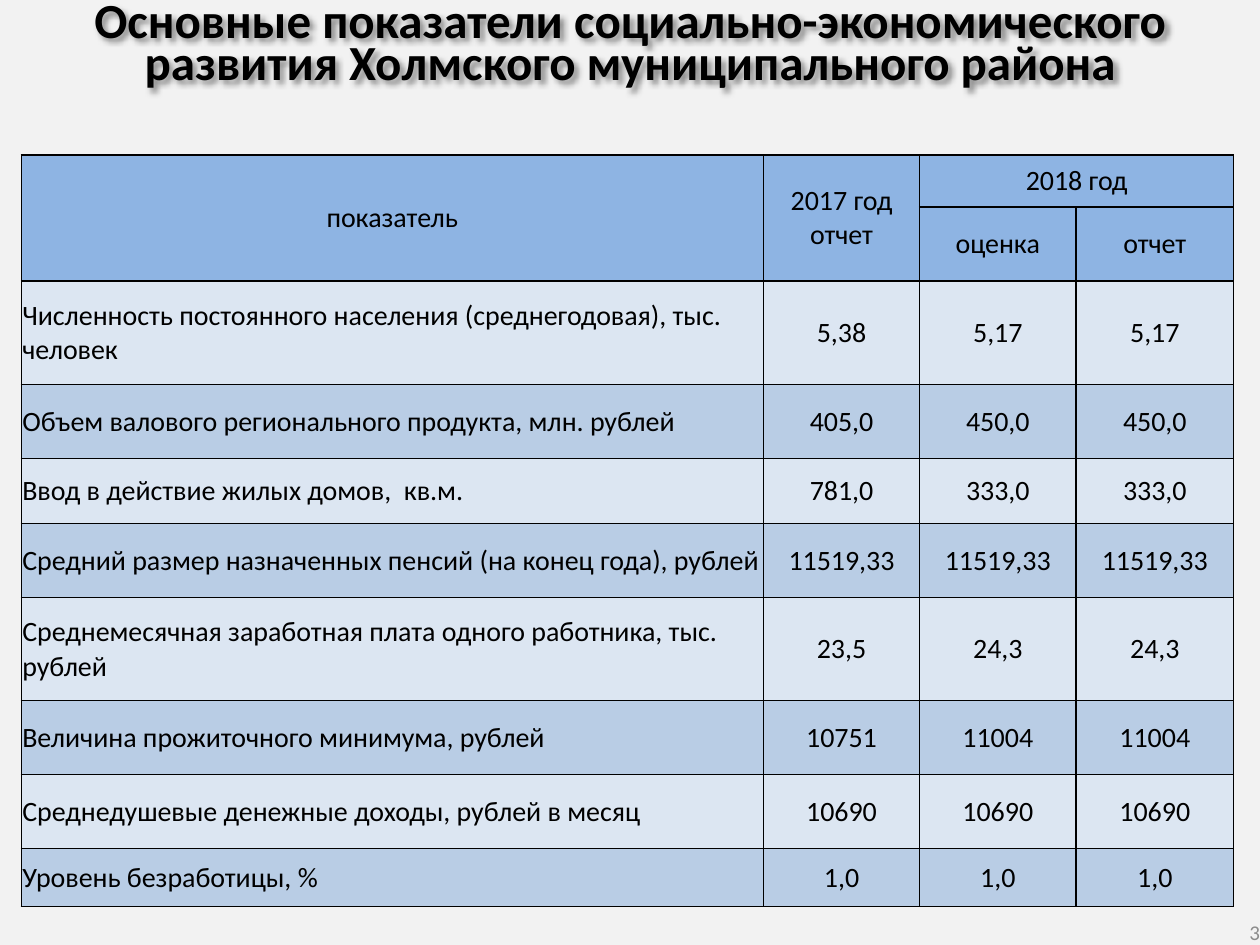
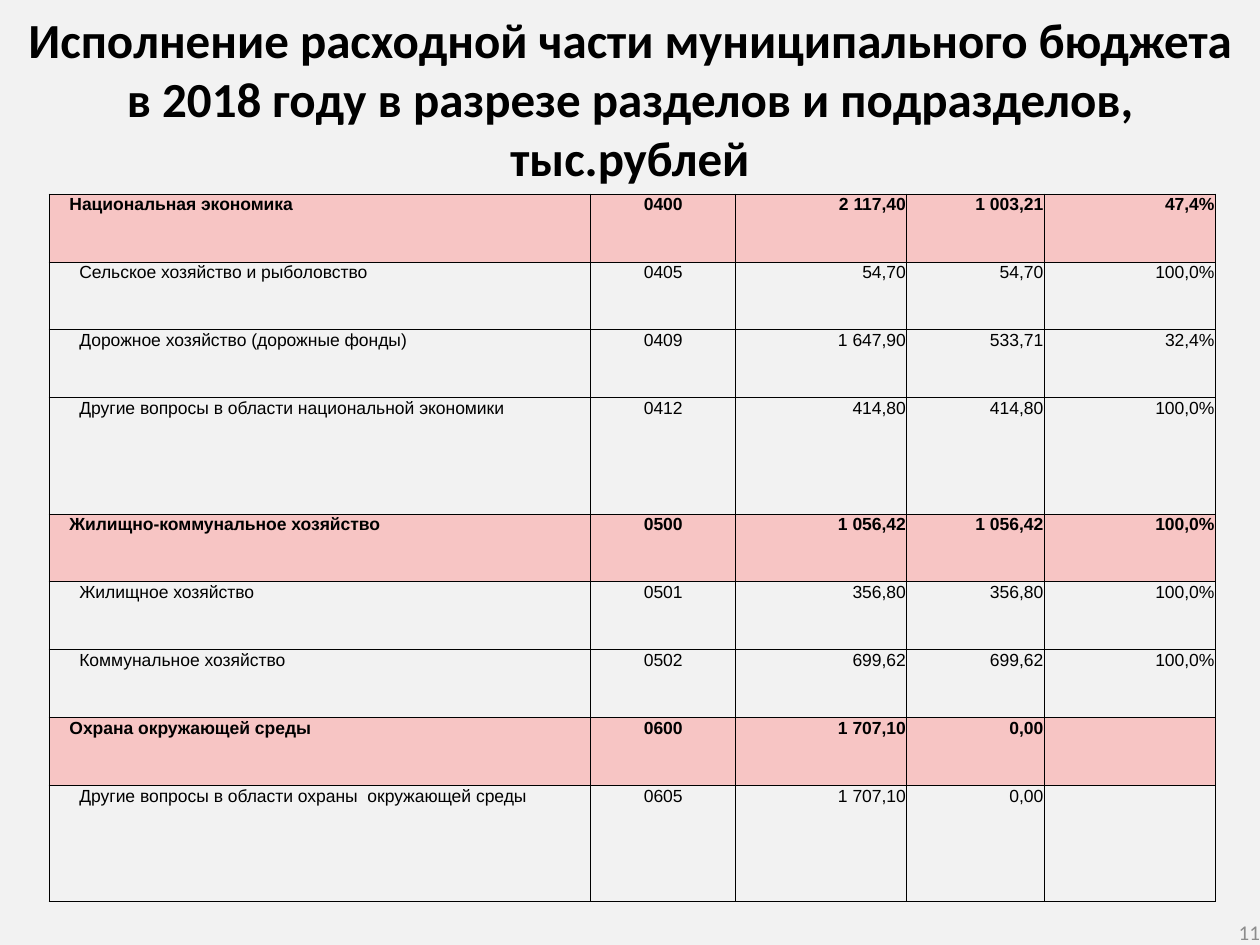
from pptx import Presentation
from pptx import util as u
from pptx.dml import color
from pptx.enum import text
from lxml import etree

NS = "http://schemas.openxmlformats.org/drawingml/2006/main"
W, H = 25.4, 19.05
BACK, INK, GREY = "F2F2F2", "000000", "8C8C8C"
HEAD, PALE, DEEP, ROSE = "8EB4E3", "DCE6F2", "B9CDE5", "F7C5C4"
LEFT, MID, RIGHT = text.PP_ALIGN.LEFT, text.PP_ALIGN.CENTER, text.PP_ALIGN.RIGHT
TOP, MIDDLE = text.MSO_ANCHOR.TOP, text.MSO_ANCHOR.MIDDLE
TITLE = {"name": "Calibri", "size": u.Pt(28), "bold": True}
FOOT = {"name": "Calibri", "size": u.Pt(12)}
BODY = {"name": "Calibri", "size": u.Pt(16)}
SMALL = {"name": "Arial", "size": u.Pt(10)}

FACTS = [
    ("показатель", "2017 год отчет", "2018 год", ""),
    ("", "", "оценка", "отчет"),
    ("Численность постоянного населения (среднегодовая), тыс. человек", "5,38", "5,17", "5,17"),
    ("Объем валового регионального продукта, млн. рублей", "405,0", "450,0", "450,0"),
    ("Ввод в действие жилых домов,  кв.м.", "781,0", "333,0", "333,0"),
    ("Средний размер назначенных пенсий (на конец года), рублей",
     "11519,33", "11519,33", "11519,33"),
    ("Среднемесячная заработная плата одного работника, тыс. рублей", "23,5", "24,3", "24,3"),
    ("Величина прожиточного минимума, рублей", "10751", "11004", "11004"),
    ("Среднедушевые денежные доходы, рублей в месяц", "10690", "10690", "10690"),
    ("Уровень безработицы, %", "1,0", "1,0", "1,0"),
]
COSTS = [
    ("Национальная экономика", "0400", "2 117,40", "1 003,21", "47,4%"),
    ("Сельское хозяйство и рыболовство", "0405", "54,70", "54,70", "100,0%"),
    ("Дорожное хозяйство (дорожные фонды)", "0409", "1 647,90", "533,71", "32,4%"),
    ("Другие вопросы в области национальной экономики", "0412", "414,80", "414,80", "100,0%"),
    ("Жилищно-коммунальное хозяйство", "0500", "1 056,42", "1 056,42", "100,0%"),
    ("Жилищное хозяйство", "0501", "356,80", "356,80", "100,0%"),
    ("Коммунальное хозяйство", "0502", "699,62", "699,62", "100,0%"),
    ("Охрана окружающей среды", "0600", "1 707,10", "0,00", ""),
    ("Другие вопросы в области охраны  окружающей среды", "0605", "1 707,10", "0,00", ""),
]


def paint(item, tone):
    item.solid()
    item.fore_color.rgb = color.RGBColor.from_string(tone)


def apply(item, looks):
    for key, val in looks.items():
        setattr(item, key, val)


def write(para, words, looks, align, tone=INK):
    para.alignment = align
    if words:
        run = para.add_run()
        run.text = words
        apply(run.font, looks)
        paint(run.font.fill, tone)


def add_text(slide, box, words, looks, align, frame, tone=INK):
    shape = slide.shapes.add_textbox(*map(u.Cm, box))
    apply(shape.text_frame, {"word_wrap": True, **frame})
    write(shape.text_frame.paragraphs[0], words, looks, align, tone)
    return shape


def add_title(slide, words, high, frame):
    return add_text(slide, (0, 0, W, high), words, TITLE, MID, frame)


def cast_shade(shape):
    shape._element.spPr.append(etree.fromstring(
        f'<a:effectLst xmlns:a="{NS}"><a:outerShdw blurRad="38100" dist="38100" '
        f'dir="2700000"><a:srgbClr val="{INK}"><a:alpha val="43000"/>'
        '</a:srgbClr></a:outerShdw></a:effectLst>'))


def add_slide(deck, num):
    slide = deck.slides.add_slide(deck.slide_layouts[6])
    paint(slide.background.fill, BACK)
    wide, high = 5.92, 0.53
    flat = {"margin_" + side: 0 for side in ("left", "right", "top", "bottom")}
    add_text(slide, (W - wide, H - high, wide, high), str(num), FOOT, RIGHT,
             {"vertical_anchor": MIDDLE, **flat}, GREY)
    return slide


def add_edges(cell, width):
    props = cell._tc.get_or_add_tcPr()
    for side in "LRTB":
        props.append(etree.fromstring(
            f'<a:ln{side} xmlns:a="{NS}" w="{u.Pt(width)}"><a:solidFill>'
            f'<a:srgbClr val="{INK}"/></a:solidFill></a:ln{side}>'))


def add_grid(slide, spot, cols, rows, data, style):
    box = (*spot, sum(cols), sum(rows))
    grid = slide.shapes.add_table(len(rows), len(cols), *map(u.Cm, box)).table
    apply(grid, {"first_row": False, "horz_banding": False})
    for col, wide in zip(grid.columns, cols):
        col.width = u.Cm(wide)
    for row, high in zip(grid.rows, rows):
        row.height = u.Cm(high)
    for r, line in enumerate(data):
        for c, words in enumerate(line):
            cell = grid.cell(r, c)
            looks, align, tone, edge, anchor, inset = style(r, c)
            add_edges(cell, edge)
            apply(cell, {"margin_left": u.Cm(inset), "margin_right": u.Cm(0.02),
                         "margin_top": u.Cm(0.02), "margin_bottom": 0,
                         "vertical_anchor": anchor})
            if tone:
                paint(cell.fill, tone)
            else:
                cell.fill.background()
            write(cell.text_frame.paragraphs[0], words, looks, align)
    return grid


def fact_style(r, c):
    tone = HEAD if r < 2 else (PALE, DEEP)[r % 2]
    align = LEFT if r > 1 and c == 0 else MID
    return BODY, align, tone, 1, MIDDLE, 0.02


def cost_style(r, c):
    main = COSTS[r][1].endswith("00")
    align = (LEFT, MID, RIGHT, RIGHT, RIGHT)[c]
    inset = 0.02 if c else 0.41 if main else 0.61
    return {**SMALL, "bold": main}, align, ROSE if main else None, 0.5, TOP, inset


def fact_slide(deck):
    slide = add_slide(deck, 3)
    title = add_title(slide, "Основные показатели социально-экономического развития "
                      "Холмского муниципального района", 2.59, {})
    title.text_frame.paragraphs[0].line_spacing = u.Pt(24)
    cast_shade(title)
    rows = [1.05, 1.49, 2.09, 1.49, 1.31, 1.49, 2.08, 1.49, 1.49, 1.17]
    grid = add_grid(slide, (0.43, 3.12), [14.96, 3.15, 3.15, 3.18], rows, FACTS, fact_style)
    for top, left, low, far in ((0, 0, 1, 0), (0, 1, 1, 1), (0, 2, 0, 3)):
        grid.cell(top, left).merge(grid.cell(low, far))


def cost_slide(deck):
    slide = add_slide(deck, 11)
    add_title(slide, "Исполнение расходной части муниципального бюджета в 2018 году "
              "в разрезе разделов и подразделов, тыс.рублей", 3.91,
              {"margin_top": u.Cm(0.2), "auto_size": text.MSO_AUTO_SIZE.SHAPE_TO_FIT_TEXT})
    rows = [2.34 if line[0].startswith("Другие") else 1.37 for line in COSTS]
    add_grid(slide, (0.99, 3.91), [10.92, 2.92, 3.45, 2.77, 3.45], rows, COSTS, cost_style)


def main():
    deck = Presentation()
    apply(deck, {"slide_width": u.Cm(W), "slide_height": u.Cm(H)})
    fact_slide(deck)
    cost_slide(deck)
    deck.save("out.pptx")


if __name__ == "__main__":
    main()
